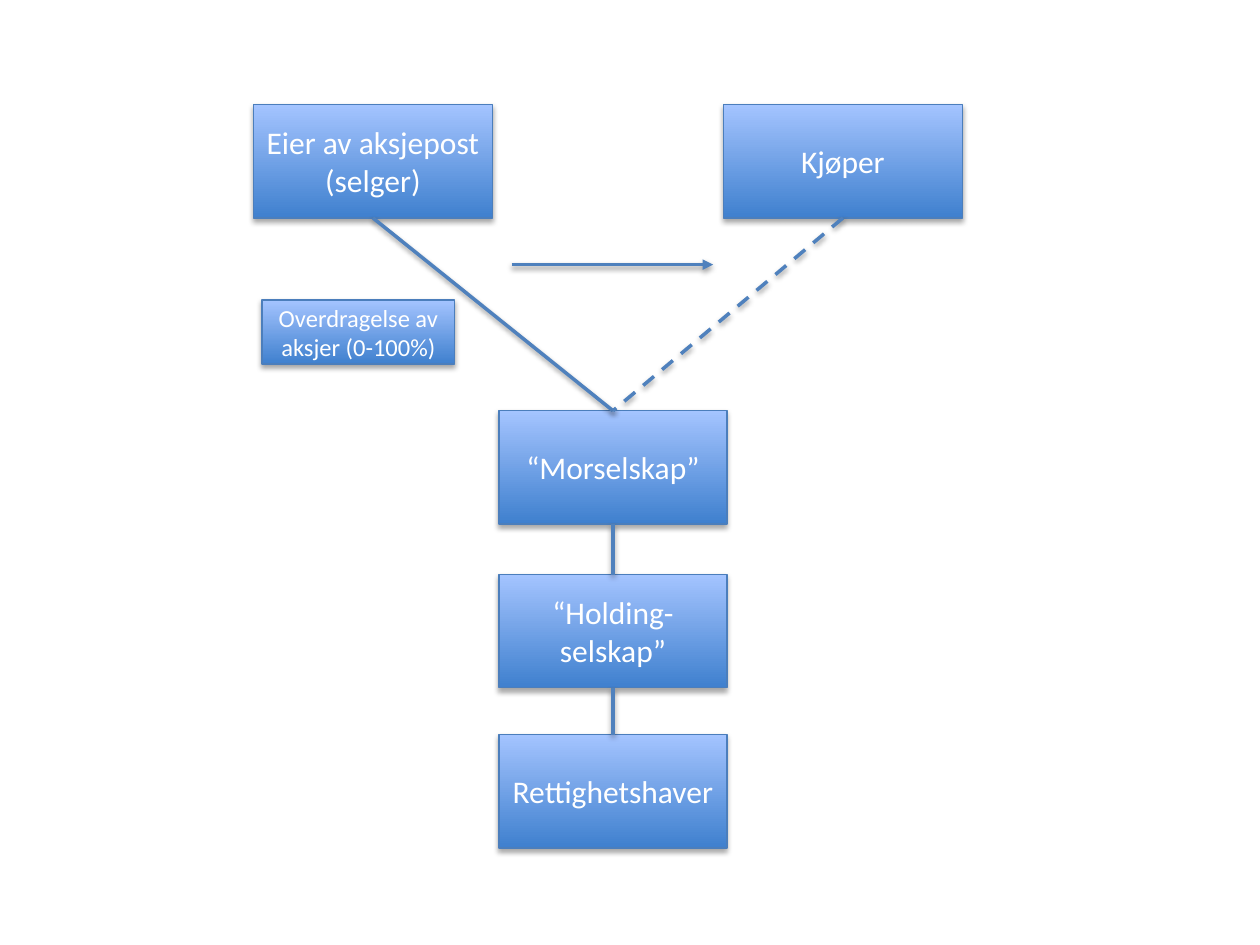
from dataclasses import dataclass

from lxml.etree import SubElement
from pptx import Presentation
from pptx.dml.color import RGBColor
from pptx.enum.dml import MSO_LINE
from pptx.enum.shapes import MSO_CONNECTOR, MSO_SHAPE
from pptx.enum.text import MSO_ANCHOR, PP_ALIGN
from pptx.oxml.ns import qn
from pptx.shapes.autoshape import Shape
from pptx.shapes.connector import Connector
from pptx.slide import Slide
from pptx.util import Inches, Pt

TOP, BOTTOM = 0, 2


@dataclass
class Box:
    """A labelled box, in inches and points."""
    text: str
    left: float
    top: float
    width: float
    height: float = 0.9
    size: int = 18


@dataclass
class Link:
    """A line from the bottom of one box to the top of another."""
    upper: str
    lower: str
    dashed: bool = False


BOXES = {
    "owner": Box("Rettighetshaver", 3.96, 5.83, 1.81),
    "parent": Box("“Morselskap”", 3.96, 3.26, 1.81),
    "holding": Box("“Holding-selskap”", 3.96, 4.56, 1.81),
    "seller": Box("Eier av aksjepost (selger)", 2.01, 0.83, 1.9),
    "buyer": Box("Kjøper", 5.74, 0.83, 1.9),
    "transfer": Box("Overdragelse av aksjer (0-100%)", 2.08, 2.38, 1.53, 0.51, 14),
}
LINKS = [
    Link("seller", "parent"),
    Link("buyer", "parent", True),
    Link("parent", "holding"),
    Link("holding", "owner"),
]


def color(code: str) -> RGBColor:
    """Turn a hex string into a colour."""
    return RGBColor.from_string(code)


def add_shadow(item: Shape | Connector, drop: float, alpha: int) -> None:
    """Give an item a soft shadow that falls straight down."""
    props = item.element.spPr
    for old in props.findall(qn("a:effectLst")):
        props.remove(old)
    effects = SubElement(props, qn("a:effectLst"))
    outer = SubElement(effects, qn("a:outerShdw"), blurRad=str(Pt(3.1)),
                       dist=str(Pt(drop)), dir="5400000", rotWithShape="0")
    black = SubElement(outer, qn("a:srgbClr"), val="000000")
    SubElement(black, qn("a:alpha"), val=str(alpha * 1000))


def add_box(slide: Slide, box: Box) -> Shape:
    """Draw a gradient box with centred text."""
    shape = slide.shapes.add_shape(
        MSO_SHAPE.RECTANGLE, Inches(box.left), Inches(box.top),
        Inches(box.width), Inches(box.height))
    shape.fill.gradient()
    shape.fill.gradient_angle = 90
    for stop, code in zip(shape.fill.gradient_stops, ("3F80CE", "A4C4FF")):
        stop.color.rgb = color(code)
    shape.line.color.rgb = color("4B7EBC")
    shape.line.width = Pt(0.75)
    add_shadow(shape, 1.8, 35)
    frame = shape.text_frame
    frame.word_wrap = True
    frame.vertical_anchor = MSO_ANCHOR.MIDDLE
    para = frame.paragraphs[0]
    para.alignment = PP_ALIGN.CENTER
    run = para.add_run()
    run.text = box.text
    run.font.name = "Calibri"
    run.font.size = Pt(box.size)
    run.font.color.rgb = color("FFFFFF")
    return shape


def add_line(slide: Slide, left: float = 0, right: float = 0, top: float = 0) -> Connector:
    """Draw a level line, ready to be joined to boxes if need be."""
    line = slide.shapes.add_connector(
        MSO_CONNECTOR.STRAIGHT, Inches(left), Inches(top), Inches(right), Inches(top))
    line.line.color.rgb = color("4F81BD")
    line.line.width = Pt(2)
    add_shadow(line, 1.6, 38)
    return line


def add_link(slide: Slide, link: Link, shapes: dict[str, Shape]) -> None:
    """Join two boxes with a line."""
    line = add_line(slide)
    line.begin_connect(shapes[link.upper], BOTTOM)
    line.end_connect(shapes[link.lower], TOP)
    if link.dashed:
        line.line.dash_style = MSO_LINE.DASH


def add_arrow(slide: Slide, left: float, right: float, top: float) -> None:
    """Draw a level arrow that points right."""
    line = add_line(slide, left, right, top)
    SubElement(line.element.spPr.find(qn("a:ln")), qn("a:tailEnd"), type="triangle")


def main() -> None:
    """Build the share transfer chart and save it."""
    deck = Presentation()
    deck.slide_width, deck.slide_height = Inches(10), Inches(7.5)
    slide = deck.slides.add_slide(deck.slide_layouts[6])
    shapes = {name: add_box(slide, box) for name, box in BOXES.items()}
    for link in LINKS:
        add_link(slide, link, shapes)
    add_arrow(slide, 4.06, 5.66, 2.1)
    deck.save("out.pptx")


if __name__ == "__main__":
    main()
